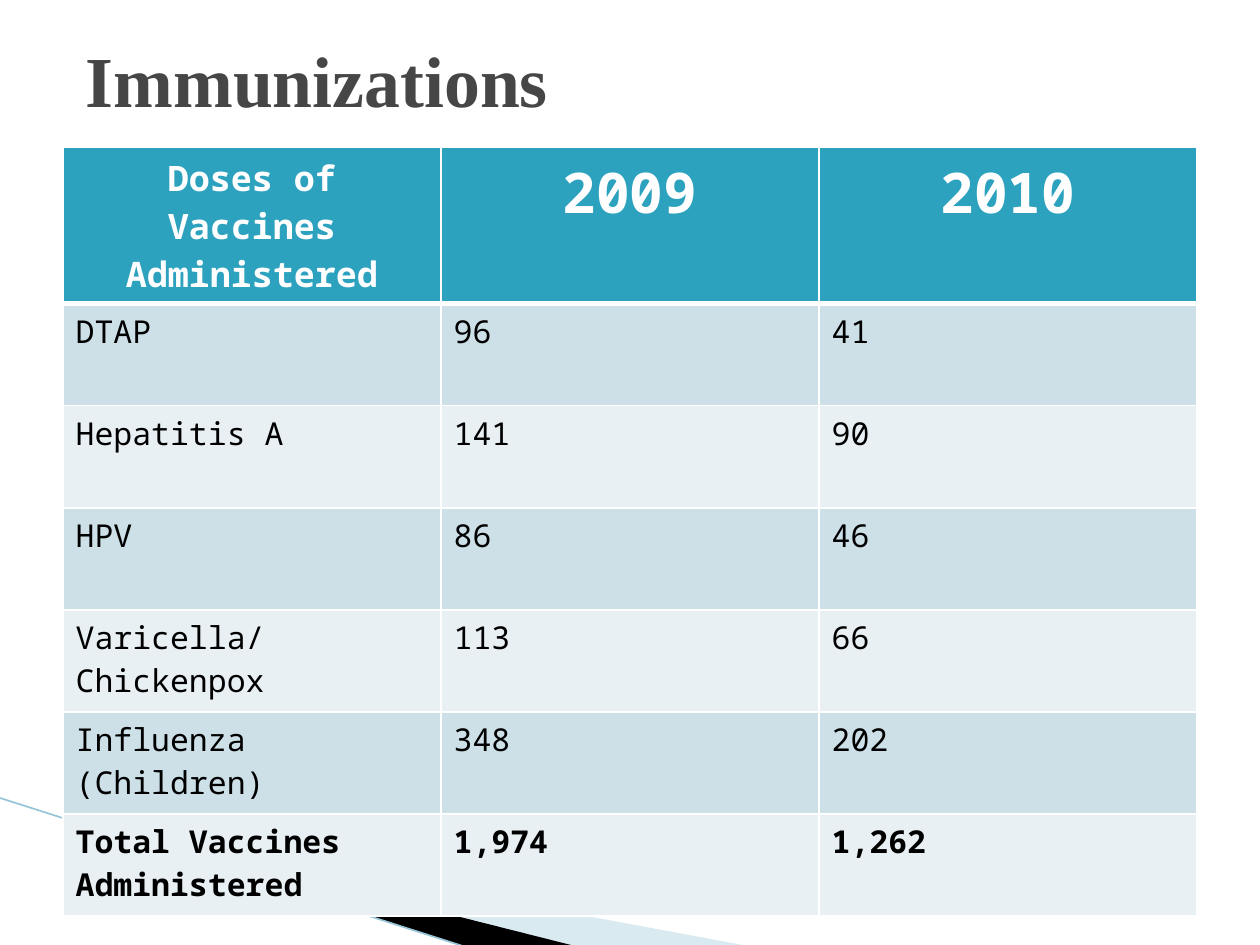
from lxml.etree import SubElement
from pptx import Presentation
from pptx.dml.color import RGBColor
from pptx.enum.shapes import MSO_CONNECTOR
from pptx.enum.text import MSO_ANCHOR, PP_ALIGN
from pptx.oxml.ns import qn
from pptx.util import Inches, Pt

TITLE = "Immunizations"
HEADER = ("Doses of Vaccines Administered", "2009", "2010")
DOSES = [
    ("DTAP", "96", "41"),
    ("Hepatitis A", "141", "90"),
    ("HPV", "86", "46"),
    ("Varicella/Chickenpox", "113", "66"),
    ("Influenza (Children)", "348", "202"),
    ("Total Vaccines Administered", "1,974", "1,262"),
]
BANDS = ("CDE0E8", "E8F0F4")
WEDGES = [
    ([(0.55, 6.51), (5.95, 7.51), (4.56, 7.51), (0.55, 6.5)], "A0CBDC", 40),
    ([(0.53, 6.49), (4.57, 7.51), (3.72, 7.52), (0.54, 6.5)], "000000", 100),
]
HEADER_HEIGHT, ROW_HEIGHT, COLUMN_WIDTH = 0.83, 0.81, 3


def color(value):
    return RGBColor.from_string(value)


def add_text(frame, text, font, size, ink, bold, align=PP_ALIGN.LEFT):
    para = frame.paragraphs[0]
    para.alignment = align
    span = para.add_run()
    span.text = text
    span.font.name = font
    span.font.size = Pt(size)
    span.font.bold = bold
    span.font.color.rgb = color(ink)


def add_wedge(page, points, fill, opacity):
    corners = [(Inches(x), Inches(y)) for x, y in points]
    builder = page.shapes.build_freeform(*corners[0])
    builder.add_line_segments(corners[1:], close=True)
    wedge = builder.convert_to_shape()
    wedge.shadow.inherit = False
    wedge.fill.solid()
    wedge.fill.fore_color.rgb = color(fill)
    wedge.line.fill.background()
    if opacity < 100:
        tint = wedge.fill._xPr.find(qn("a:solidFill"))[0]
        SubElement(tint, qn("a:alpha"), val=str(opacity * 1000))


def style_cell(cell, fill, bottom):
    props = cell._tc.get_or_add_tcPr()
    for side, width in (("L", 1), ("R", 1), ("T", 1), ("B", bottom)):
        edge = SubElement(props, qn(f"a:ln{side}"), w=str(Pt(width)))
        SubElement(SubElement(edge, qn("a:solidFill")), qn("a:srgbClr"), val="FFFFFF")
    cell.fill.solid()
    cell.fill.fore_color.rgb = color(fill)


def add_doses_table(page):
    rows = [HEADER, *DOSES]
    height = HEADER_HEIGHT + ROW_HEIGHT * len(DOSES)
    table = page.shapes.add_table(
        len(rows), len(HEADER), Inches(0.5), Inches(1.17),
        Inches(COLUMN_WIDTH * len(HEADER)), Inches(height)).table
    for column in table.columns:
        column.width = Inches(COLUMN_WIDTH)
    for r, values in enumerate(rows):
        is_header = r == 0
        table.rows[r].height = Inches(HEADER_HEIGHT if is_header else ROW_HEIGHT)
        for c, value in enumerate(values):
            cell = table.cell(r, c)
            if is_header:
                style_cell(cell, "2DA2BF", 3)
                add_text(cell.text_frame, value, "Noto Sans Mono",
                         32 if c else 20, "FFFFFF", True, PP_ALIGN.CENTER)
            else:
                style_cell(cell, BANDS[(r - 1) % 2], 1)
                add_text(cell.text_frame, value, "Noto Sans Mono",
                         18, "000000", r == len(DOSES))


def main():
    deck = Presentation()
    deck.slide_width, deck.slide_height = Inches(10), Inches(7.5)
    page = deck.slides.add_slide(deck.slide_layouts[5])

    for points, fill, opacity in WEDGES:
        add_wedge(page, points, fill, opacity)
    line = page.shapes.add_connector(
        MSO_CONNECTOR.STRAIGHT, Inches(-0.01), Inches(6.33), Inches(3.71), Inches(7.52))
    line.line.color.rgb = color("97C5D8")
    line.line.width = Pt(0.95)
    SubElement(line._element.spPr, qn("a:effectLst"))

    add_doses_table(page)

    title = page.shapes.title
    title.left, title.top = Inches(0.58), Inches(0)
    title.width, title.height = Inches(9), Inches(1.25)
    title.text_frame.vertical_anchor = MSO_ANCHOR.MIDDLE
    add_text(title.text_frame, TITLE, "Times New Roman", 41, "464646", True)

    deck.save("out.pptx")


if __name__ == "__main__":
    main()
